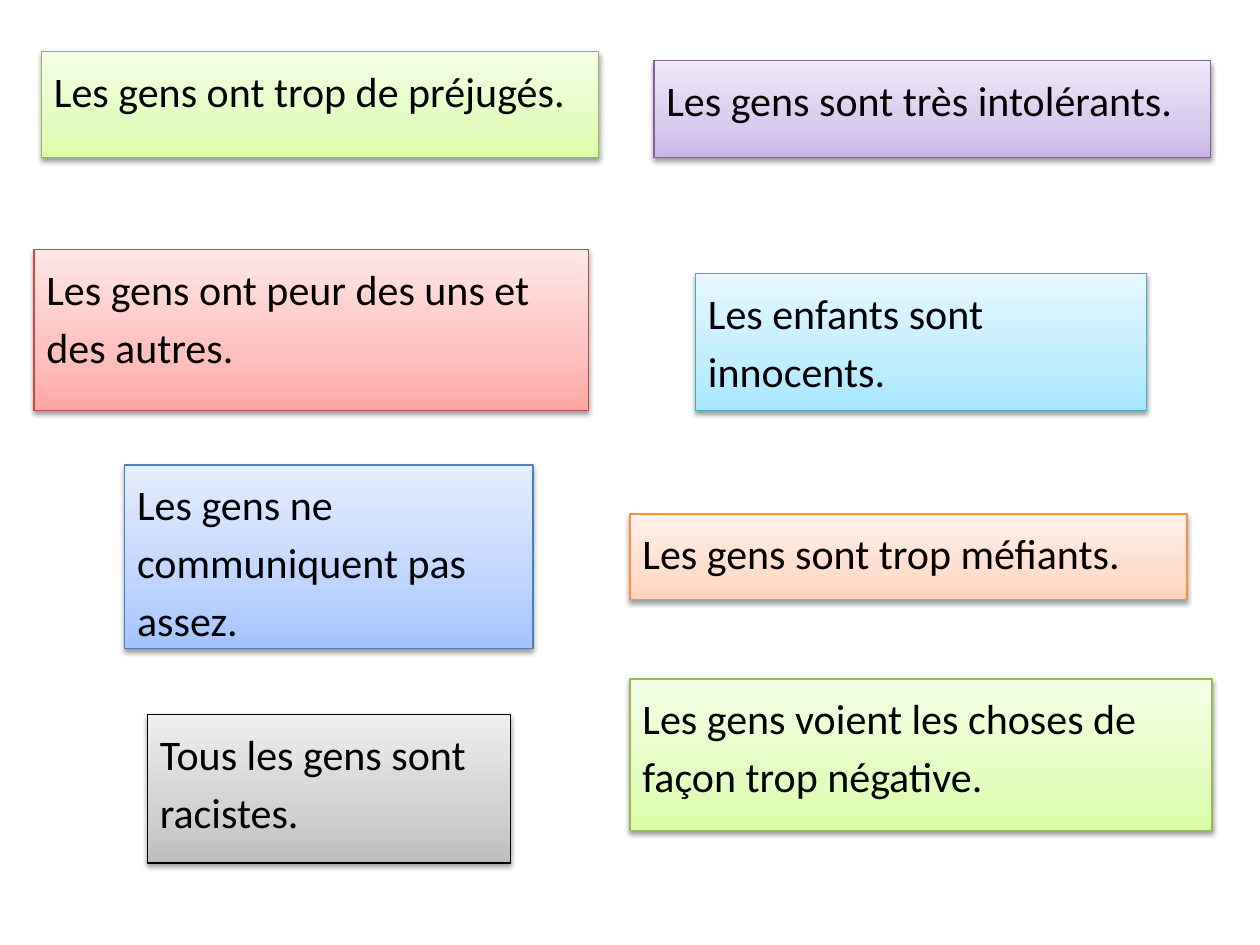
from copy import deepcopy
from lxml import etree
from pptx import Presentation
from pptx import util as u
from pptx.dml import color
from pptx.enum import shapes, text
from pptx.oxml import ns


def tint(code):
    return color.RGBColor.from_string(code)


deck = Presentation()
deck.slide_width, deck.slide_height = u.Inches(10), u.Inches(7.5)
slide = deck.slides.add_slide(deck.slide_layouts[6])
col, row = deck.slide_width / 100, deck.slide_height / 75

looks = {
    "green": ("98B955", "DAFDA7", "E4FCC2", "F5FFE7"),
    "aqua": ("46AAC5", "A7E6FF", "C1EDFF", "E7F8FF"),
    "red": ("BF4C48", "FFA6A5", "FFC0BF", "FFE7E7"),
    "purple": ("7D60A0", "C9B5E8", "D8CBEE", "F0EAF9"),
    "orange": ("F69240", "FFD2BD", "FFDED0", "FFF2ED"),
    "blue": ("4B7EBC", "A4C4FF", "BFD4FF", "E6EEFF"),
    "gray": ("000000", "BDBDBD", "D1D1D1", "EEEEEE"),
}
cards = [
    (3.3, 4.1, 44.2, 8.4, "green", "Les gens ont trop de préjugés."),
    (55.2, 21.7, 35.8, 10.9, "aqua", "Les enfants sont innocents."),
    (2.7, 19.8, 44, 12.8, "red", "Les gens ont peur des uns et des autres."),
    (51.9, 4.8, 44.2, 7.7, "purple", "Les gens sont très intolérants."),
    (50, 40.8, 44.2, 6.8, "orange", "Les gens sont trop méfiants."),
    (9.9, 36.9, 32.4, 14.6, "blue", "Les gens ne communiquent pas assez."),
    (11.7, 56.7, 28.8, 11.8, "gray", "Tous les gens sont racistes."),
    (50, 53.9, 46.2, 12, "green", "Les gens voient les choses de façon trop négative."),
]
frame = {"word_wrap": True, "vertical_anchor": text.MSO_ANCHOR.TOP}
para = {"alignment": text.PP_ALIGN.LEFT, "line_spacing": 1.15, "space_after": u.Pt(10)}
font = {"name": "Calibri", "size": u.Pt(24)}
shade = {"blurRad": u.Pt(3.1), "dist": u.Pt(1.6), "dir": 90 * 60000, "rotWithShape": 0}

for x, y, w, h, look, words in cards:
    edge, *tones = looks[look]
    box = slide.shapes.add_shape(
        shapes.MSO_SHAPE.RECTANGLE, int(x * col), int(y * row), int(w * col), int(h * row))
    box.fill.gradient()
    box.fill.gradient_angle = 90
    props = box._element.spPr
    stops = props.find(".//" + ns.qn("a:gsLst"))
    stops.append(deepcopy(stops[0]))
    for stop, tone, spot in zip(box.fill.gradient_stops, tones, (0, 0.35, 1)):
        stop.color.rgb = tint(tone)
        stop.position = spot
    box.line.color.rgb = tint(edge)
    box.line.width = u.Pt(0.75)

    box.shadow.inherit = False
    glow = etree.SubElement(props.find(ns.qn("a:effectLst")), ns.qn("a:outerShdw"))
    for key, val in shade.items():
        glow.set(key, str(val))
    black = etree.SubElement(glow, ns.qn("a:srgbClr"), val="000000")
    etree.SubElement(black, ns.qn("a:alpha"), val="38000")

    body = box.text_frame
    line = body.paragraphs[0]
    run = line.add_run()
    run.text = words
    run.font.color.rgb = tint("000000")
    for item, form in ((body, frame), (line, para), (run.font, font)):
        for key, val in form.items():
            setattr(item, key, val)

deck.save("out.pptx")
